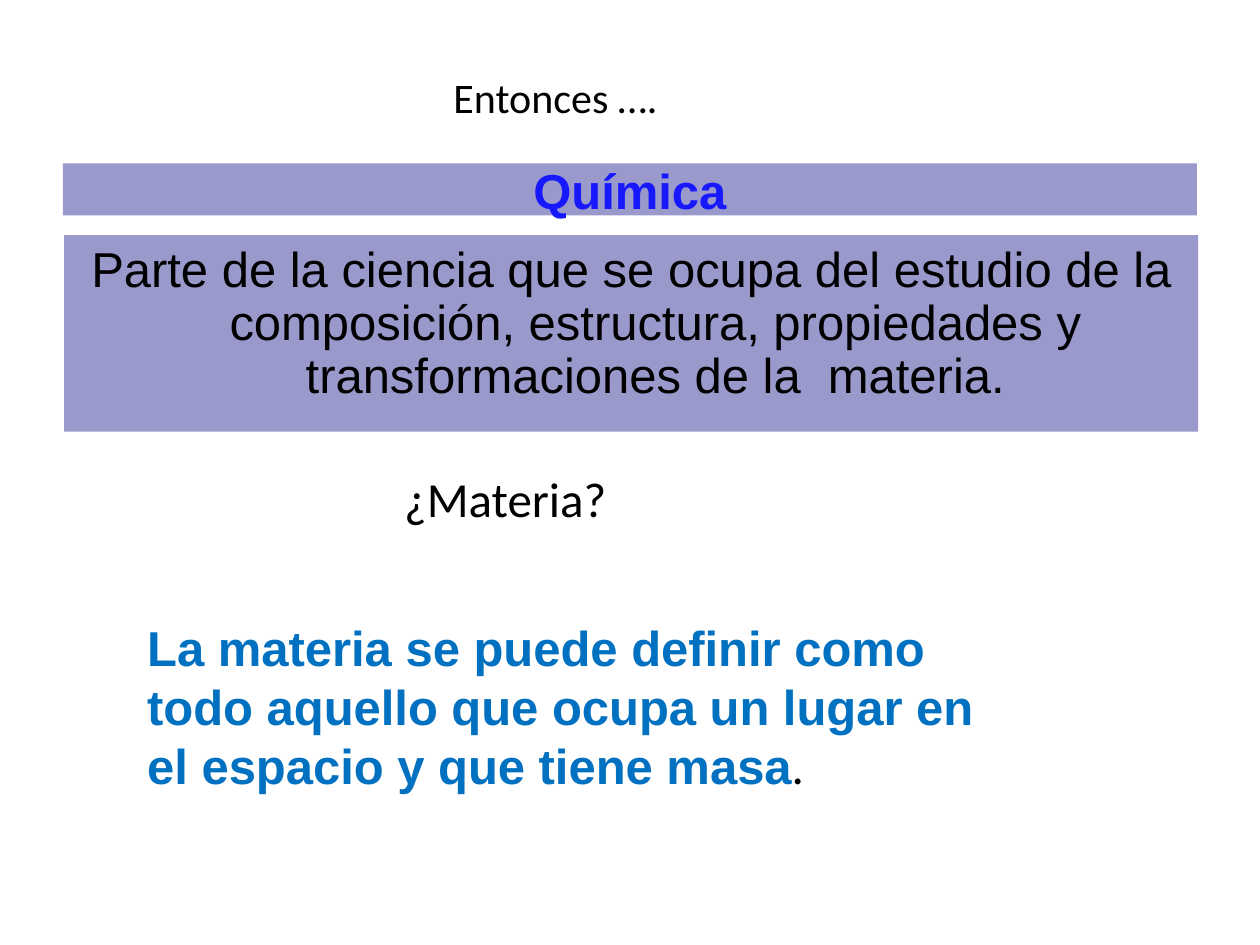
from dataclasses import dataclass
from typing import NamedTuple, Optional

from pptx import Presentation
from pptx.dml.color import RGBColor
from pptx.enum.shapes import MSO_SHAPE
from pptx.enum.text import MSO_ANCHOR as Anchor, PP_ALIGN as Align
from pptx.util import Emu, Inches, Pt

SLIDE_W, SLIDE_H = Inches(10), Inches(7.5)


@dataclass(frozen=True)
class Theme:
    band: str = "9999CC"
    heading: str = "1818FF"
    emphasis: str = "0070C0"
    body: str = "000000"
    sans: str = "Arial"
    plain: str = "Calibri"
    large: int = 28
    medium: int = 24


THEME = Theme()


class Area(NamedTuple):
    """Left, top, width and height as shares of the slide."""
    left: float
    top: float
    width: float
    height: float


class Span(NamedTuple):
    text: str
    font: str
    color: str
    size: int = THEME.large
    bold: bool = False


@dataclass(frozen=True)
class Block:
    area: Area
    spans: tuple[Span, ...]
    fill: Optional[str] = None
    align: Align = Align.LEFT
    anchor: Anchor = Anchor.TOP
    hanging: float = 0
    line_spacing: float = 1.0
    top_inset: float = 0.05


BLOCKS = (
    Block(Area(0.05, 0.173, 0.9, 0.055),
          (Span("Química", THEME.sans, THEME.heading, bold=True),),
          fill=THEME.band, align=Align.CENTER, anchor=Anchor.MIDDLE),
    Block(Area(0.051, 0.249, 0.9, 0.208),
          (Span("Parte de la ciencia que se ocupa del estudio de la composición, "
                "estructura, propiedades y transformaciones de la  materia.",
                THEME.sans, THEME.body),),
          fill=THEME.band, align=Align.CENTER, hanging=0.38,
          line_spacing=0.9, top_inset=0.08),
    Block(Area(0.35, 0.069, 0.488, 0.067),
          (Span("Entonces ….", THEME.plain, THEME.body, THEME.medium),)),
    Block(Area(0.311, 0.489, 0.307, 0.076),
          (Span("¿Materia?", THEME.plain, THEME.body),)),
    Block(Area(0.107, 0.647, 0.7, 0.201),
          (Span("La materia se puede definir como todo aquello que ocupa un lugar "
                "en el espacio y que tiene masa", THEME.sans, THEME.emphasis, bold=True),
           Span(".", THEME.plain, THEME.body))),
)


def apply(target: object, formats: dict) -> None:
    for attribute, value in formats.items():
        setattr(target, attribute, value)


def add_span(paragraph, span: Span) -> None:
    run = paragraph.add_run()
    run.text = span.text
    apply(run.font, {"name": span.font, "size": Pt(span.size), "bold": span.bold})
    run.font.color.rgb = RGBColor.from_string(span.color)


def add_block(slide, block: Block) -> None:
    extents = (SLIDE_W, SLIDE_H) * 2
    box = [Emu(round(share * extent)) for share, extent in zip(block.area, extents)]
    if block.fill:
        shape = slide.shapes.add_shape(MSO_SHAPE.RECTANGLE, *box)
        shape.shadow.inherit = False
        shape.fill.solid()
        shape.fill.fore_color.rgb = RGBColor.from_string(block.fill)
        shape.line.fill.background()
    else:
        shape = slide.shapes.add_textbox(*box)
    frame = shape.text_frame
    apply(frame, {"word_wrap": True, "vertical_anchor": block.anchor,
                  "margin_top": Inches(block.top_inset)})
    paragraph = frame.paragraphs[0]
    apply(paragraph, {"alignment": block.align, "line_spacing": block.line_spacing})
    if block.hanging:
        indent = Inches(block.hanging)
        properties = paragraph._p.get_or_add_pPr()
        properties.set("marL", str(indent))
        properties.set("indent", str(-indent))
    for span in block.spans:
        add_span(paragraph, span)


def main() -> None:
    deck = Presentation()
    apply(deck, {"slide_width": SLIDE_W, "slide_height": SLIDE_H})
    slide = deck.slides.add_slide(deck.slide_layouts[6])
    for block in BLOCKS:
        add_block(slide, block)
    deck.save("out.pptx")


if __name__ == "__main__":
    main()
